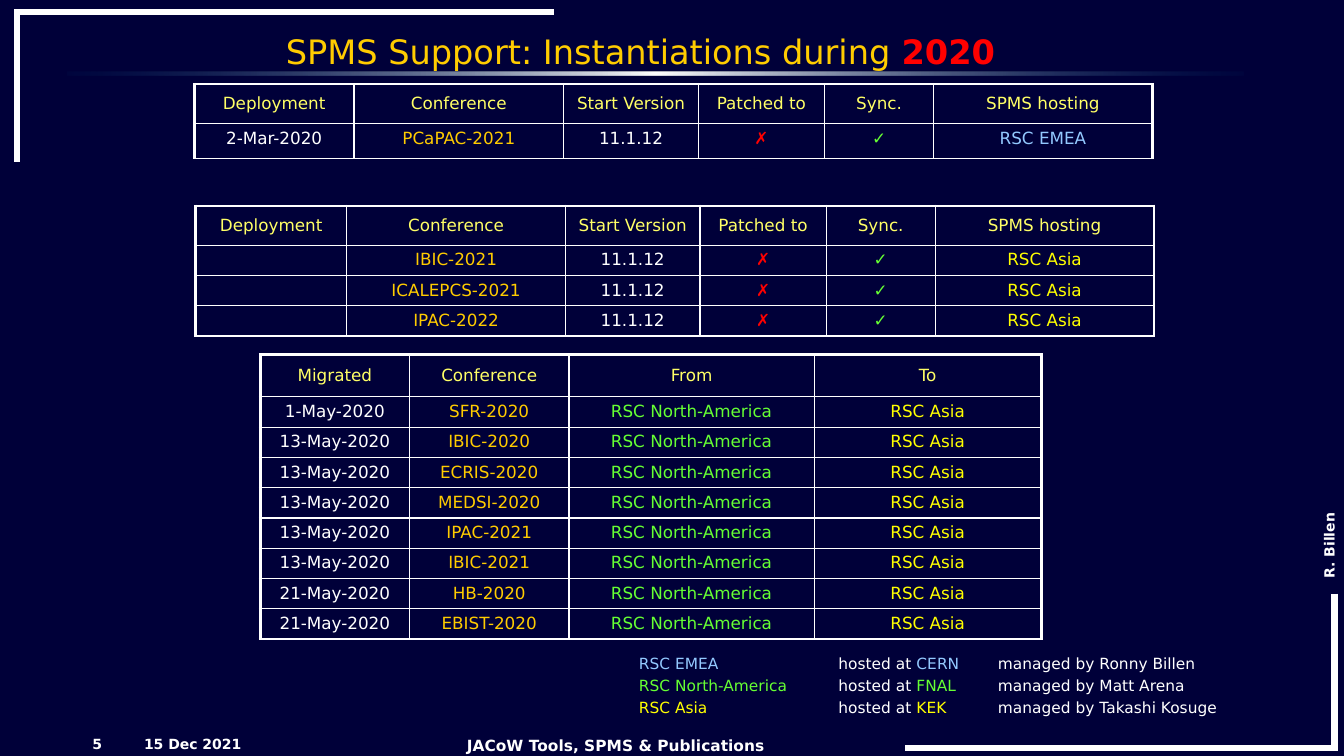
from lxml.etree import SubElement
from copy import deepcopy
from pptx import Presentation
from pptx.dml.color import RGBColor
from pptx.enum.shapes import MSO_CONNECTOR, MSO_SHAPE
from pptx.enum.text import MSO_ANCHOR as Anchor, MSO_AUTO_SIZE, PP_ALIGN as Align
from pptx.oxml import parse_xml
from pptx.oxml.ns import nsdecls, qn
from pptx.util import Cm, Pt

WHITE, RED, GREEN, YELLOW = "FFFFFF", "FF0000", "66FF33", "FFFF00"
GOLD, HEADING, SKY, NAVY, GLOW = "FFCC00", "FFFF66", "93C9FF", "000039", "003366"


def color(hex_code):
    return RGBColor.from_string(hex_code)


def assign(target, **values):
    for name, value in values.items():
        setattr(target, name, value)


class DarkSlide:
    font = "DejaVu Sans"
    thin, thick = 1, 2.25

    def __init__(self, deck):
        self.slide = deck.slides.add_slide(deck.slide_layouts[5])
        fill = self.slide.background.fill
        fill.solid()
        fill.fore_color.rgb = color(NAVY)

    def add_runs(self, paragraph, pieces, size, bold=False, align=Align.LEFT):
        """Fill a paragraph with (text, colour[, bold]) pieces."""
        paragraph.alignment = align
        for text, hex_code, *weight in pieces:
            run = paragraph.add_run()
            run.text = text
            assign(run.font, name=self.font, size=Pt(size), bold=weight[0] if weight else bold)
            run.font.color.rgb = color(hex_code)

    def title(self, box, pieces, size):
        holder = self.slide.shapes.title
        assign(holder, **dict(zip(("left", "top", "width", "height"), map(Cm, box))))
        assign(holder.text_frame, auto_size=MSO_AUTO_SIZE.NONE, vertical_anchor=Anchor.MIDDLE)
        self.add_runs(holder.text_frame.paragraphs[0], pieces, size, align=Align.CENTER)

    def text(self, box, lines, size, bold=True, align=Align.LEFT, rotation=0, tabs=(), gap=0):
        label = self.slide.shapes.add_textbox(*map(Cm, box))
        label.rotation = rotation
        frame = label.text_frame
        frame.word_wrap = True
        for index, pieces in enumerate(lines):
            paragraph = frame.add_paragraph() if index else frame.paragraphs[0]
            if tabs:
                stops = SubElement(paragraph._p.get_or_add_pPr(), qn("a:tabLst"))
                for stop in tabs:
                    SubElement(stops, qn("a:tab"), pos=str(Cm(stop)), algn="l")
            if index and gap:
                paragraph.space_before = Pt(gap)
            self.add_runs(paragraph, pieces, size, bold, align)

    def line(self, start, end, width=4.5):
        bar = self.slide.shapes.add_connector(MSO_CONNECTOR.STRAIGHT, *map(Cm, start + end))
        bar.line.width = Pt(width)
        bar.line.color.rgb = color(WHITE)
        SubElement(bar._element.spPr, qn("a:effectLst"))

    def glow(self, box, stops):
        """Draw a horizontal gradient bar from (position, colour, opacity) stops."""
        bar = self.slide.shapes.add_shape(MSO_SHAPE.RECTANGLE, *map(Cm, box))
        bar.shadow.inherit = False
        bar.line.fill.background()
        bar.fill.gradient()
        bar.fill.gradient_angle = 0
        stop_list = bar._element.spPr.find(qn("a:gradFill")).find(qn("a:gsLst"))
        stop_list.append(deepcopy(stop_list[0]))
        for stop, element, (position, hex_code, opacity) in zip(bar.fill.gradient_stops, stop_list, stops):
            stop.position = position
            stop.color.rgb = color(hex_code)
            if opacity < 100:
                SubElement(element[0], qn("a:alpha"), val=str(opacity * 1000))

    def borders(self, cell, widths):
        properties = cell._tc.get_or_add_tcPr()
        for index, (side, width) in enumerate(zip("LRTB", widths)):
            properties.insert(index, parse_xml(
                f'<a:ln{side} {nsdecls("a")} w="{Pt(width)}"><a:solidFill>'
                f'<a:srgbClr val="{WHITE}"/></a:solidFill></a:ln{side}>'))

    def table(self, corner, column_widths, heights, colors, rows):
        """Add a table with a heading row, one text colour per column below it."""
        header_height, row_height = heights
        row_heights = [header_height] + [row_height] * (len(rows) - 1)
        frame = self.slide.shapes.add_table(
            len(rows), len(column_widths), *map(Cm, corner),
            Cm(sum(column_widths)), Cm(sum(row_heights)))
        grid = frame.table
        assign(grid, first_row=False, horz_banding=False)
        for column, width in zip(grid.columns, column_widths):
            column.width = Cm(width)
        last = len(column_widths) - 1
        for r, (values, height) in enumerate(zip(rows, row_heights)):
            grid.rows[r].height = Cm(height)
            for c, value in enumerate(values):
                cell = grid.cell(r, c)
                cell.fill.background()
                cell.vertical_anchor = Anchor.TOP if r else Anchor.MIDDLE
                edges = (c == 0, c == last, r == 0, False)
                self.borders(cell, [self.thick if edge else self.thin for edge in edges])
                paragraph = cell.text_frame.paragraphs[0]
                if value:
                    self.add_runs(paragraph, [(value, colors[c] if r else HEADING)], 12, align=Align.CENTER)
                else:
                    SubElement(paragraph._p, qn("a:endParaRPr"), sz="1200")


def main():
    deck = Presentation()
    assign(deck, slide_width=Cm(33.87), slide_height=Cm(19.05))
    page = DarkSlide(deck)

    page.glow((1.7, 1.8, 29.64, 0.1), [(0, GLOW, 10), (0.5, WHITE, 100), (1, GLOW, 10)])
    for start, end in [((0.43, 0.23), (0.43, 4.09)), ((0.36, 0.3), (13.97, 0.3)),
                       ((22.81, 18.85), (33.73, 18.85)), ((33.63, 14.96), (33.63, 18.82))]:
        page.line(start, end)

    page.text((32.23, 13.21, 2.54, 0.69), [[("R. Billen", WHITE)]], 10, rotation=270)
    footer_top, footer_height = 18.42, 0.64
    for left, width, words, size, align in [
            (3.38, 4.52, "15 Dec 2021", 10, Align.LEFT),
            (8.18, 14.68, "JACoW Tools, SPMS & Publications", 11, Align.CENTER),
            (0.84, 1.98, "5", 10, Align.RIGHT)]:
        page.text((left, footer_top, width, footer_height), [[(words, WHITE)]], size, align=align)
    page.title((0.76, 0.64, 30.76, 1.27),
               [("SPMS Support: Instantiations during ", GOLD), ("2020", RED, True)], 24)

    headings = ["Deployment", "Conference", "Start Version", "Patched to", "Sync.", "SPMS hosting"]
    status = ["11.1.12", "✗", "✓"]
    status_widths = [3.39, 3.18, 2.75, 5.51]
    status_colors = [WHITE, GOLD, WHITE, RED, GREEN]
    page.table((4.9, 2.12), [4.02, 5.29] + status_widths, (0.99, 0.89), status_colors + [SKY],
               [headings, ["2-Mar-2020", "PCaPAC-2021", *status, "RSC EMEA"]])
    pending = ["IBIC-2021", "ICALEPCS-2021", "IPAC-2022"]
    page.table((4.93, 5.19), [3.81, 5.51] + status_widths, (0.99, 0.76), status_colors + [YELLOW],
               [headings] + [["", conference, *status, "RSC Asia"] for conference in pending])

    migrations = [("1-May-2020", ["SFR-2020"]),
                  ("13-May-2020", ["IBIC-2020", "ECRIS-2020", "MEDSI-2020", "IPAC-2021", "IBIC-2021"]),
                  ("21-May-2020", ["HB-2020", "EBIST-2020"])]
    page.table((6.56, 8.93), [3.76, 4.02, 6.18, 5.72], (1.07, 0.76), [WHITE, GOLD, GREEN, YELLOW],
               [["Migrated", "Conference", "From", "To"]]
               + [[date, conference, "RSC North-America", "RSC Asia"]
                  for date, conferences in migrations for conference in conferences])

    centers = [("RSC EMEA", SKY, "CERN", "Ronny Billen"),
               ("RSC North-America", GREEN, "FNAL", "Matt Arena"),
               ("RSC Asia", YELLOW, "KEK", "Takashi Kosuge")]
    page.text((15.85, 16.36, 15.27, 1.85),
              [[(center + "\t", tint), ("hosted at ", WHITE), (host, tint),
                ("\tmanaged by " + manager, WHITE)] for center, tint, host, manager in centers],
              11, bold=False, tabs=(5.03, 9.05), gap=2.6)

    deck.save("out.pptx")


if __name__ == "__main__":
    main()
